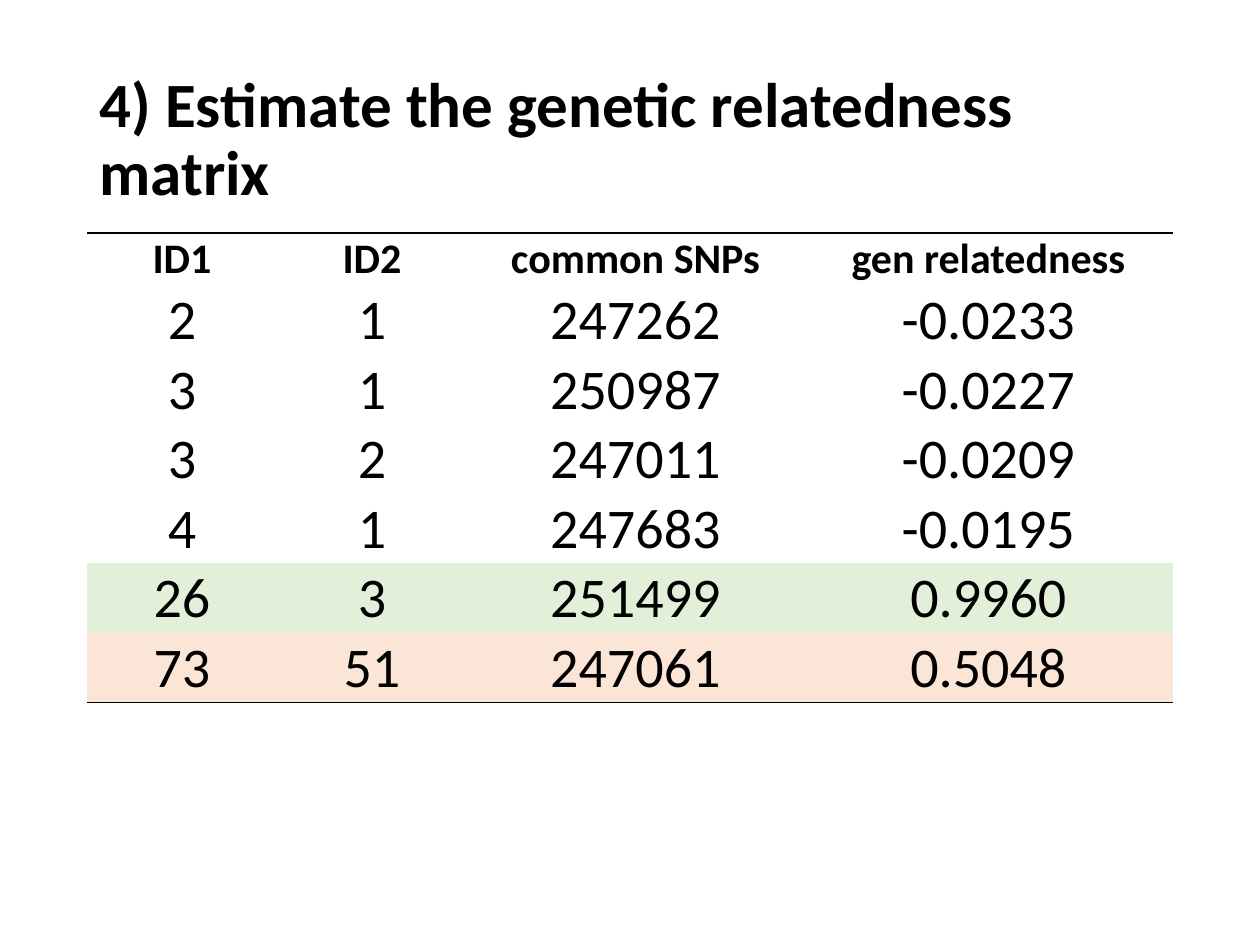
from dataclasses import dataclass
from typing import Optional

from lxml import etree
from pptx import Presentation
from pptx import util as u
from pptx.dml.color import RGBColor
from pptx.enum import text
from pptx.oxml import ns

PX = u.Inches(1) // 126
FONT = "Calibri"
COLORS = {"ink": "000000", "green": "E2F0D9", "orange": "FBE5D6"}
NO_STYLE_NO_GRID = "{2D5ABB26-0587-4C30-8999-92F81FD0307C}"

LEFT, WIDTH = 87, 1086
TITLE_TOP, TITLE_HEIGHT = 50, 183
TABLE_TOP, TABLE_HEIGHT = 233, 462
COLUMN_WIDTHS = (190, 190, 337, 369)
ROW_HEIGHT = 39  # minimum; rows grow with their text


@dataclass(frozen=True)
class Row:
    values: tuple[str, ...]
    size: int = 32
    bold: bool = False
    fill: Optional[str] = None
    rule: Optional[str] = None


ROWS = (
    Row(("ID1", "ID2", "common SNPs", "gen relatedness"), size=24, bold=True, rule="lnT"),
    Row(("2", "1", "247262", "-0.0233")),
    Row(("3", "1", "250987", "-0.0227")),
    Row(("3", "2", "247011", "-0.0209")),
    Row(("4", "1", "247683", "-0.0195")),
    Row(("26", "3", "251499", "0.9960"), fill="green"),
    Row(("73", "51", "247061", "0.5048"), fill="orange", rule="lnB"),
)


def px(length: int) -> u.Emu:
    return u.Emu(length * PX)


def write(frame, wording: str, *, size: int, bold: bool = False,
          align=text.PP_ALIGN.LEFT, spacing: float = 1.0) -> None:
    paragraph = frame.paragraphs[0]
    paragraph.alignment = align
    paragraph.line_spacing = spacing
    run = paragraph.add_run()
    run.text = wording
    run.font.name, run.font.size, run.font.bold = FONT, u.Pt(size), bold
    run.font.color.rgb = RGBColor.from_string(COLORS["ink"])


def draw_rule(cell, side: str) -> None:
    """Put a 1 pt line on one side of a cell, ahead of its fill."""
    line = etree.Element(ns.qn(f"a:{side}"), w=str(u.Pt(1)))
    solid = etree.SubElement(line, ns.qn("a:solidFill"))
    etree.SubElement(solid, ns.qn("a:srgbClr"), val=COLORS["ink"])
    cell._tc.get_or_add_tcPr().insert(0, line)


def fill_cell(cell, value: str, row: Row) -> None:
    cell.margin_left = cell.margin_right = cell.margin_top = px(1)
    cell.margin_bottom = 0
    cell.vertical_anchor = text.MSO_ANCHOR.MIDDLE
    write(cell.text_frame, value, size=row.size, bold=row.bold,
          align=text.PP_ALIGN.CENTER)
    if row.fill:
        cell.fill.solid()
        cell.fill.fore_color.rgb = RGBColor.from_string(COLORS[row.fill])
    else:
        cell.fill.background()
    if row.rule:
        draw_rule(cell, row.rule)


def add_title(slide, wording: str) -> None:
    title = slide.shapes.title
    title.left, title.top = px(LEFT), px(TITLE_TOP)
    title.width, title.height = px(WIDTH), px(TITLE_HEIGHT)
    frame = title.text_frame
    frame.word_wrap = True
    frame.auto_size = text.MSO_AUTO_SIZE.NONE
    frame.vertical_anchor = text.MSO_ANCHOR.MIDDLE
    write(frame, wording, size=36, bold=True, spacing=0.9)


def add_relatedness_table(slide) -> None:
    holder = slide.shapes.add_table(len(ROWS), len(COLUMN_WIDTHS), px(LEFT),
                                    px(TABLE_TOP), px(WIDTH), px(TABLE_HEIGHT))
    table = holder.table
    table.first_row = table.horz_banding = False
    table._tbl.tblPr.find(ns.qn("a:tableStyleId")).text = NO_STYLE_NO_GRID
    for column, width in zip(table.columns, COLUMN_WIDTHS):
        column.width = px(width)
    for table_row, row in zip(table.rows, ROWS):
        table_row.height = px(ROW_HEIGHT)
        for cell, value in zip(table_row.cells, row.values):
            fill_cell(cell, value, row)
    holder.height = px(TABLE_HEIGHT)


def main() -> None:
    deck = Presentation()
    deck.slide_width, deck.slide_height = u.Inches(10), u.Inches(7.5)
    slide = deck.slides.add_slide(deck.slide_layouts[5])  # title only
    add_title(slide, "4) Estimate the genetic relatedness matrix")
    add_relatedness_table(slide)
    deck.save("out.pptx")


if __name__ == "__main__":
    main()
